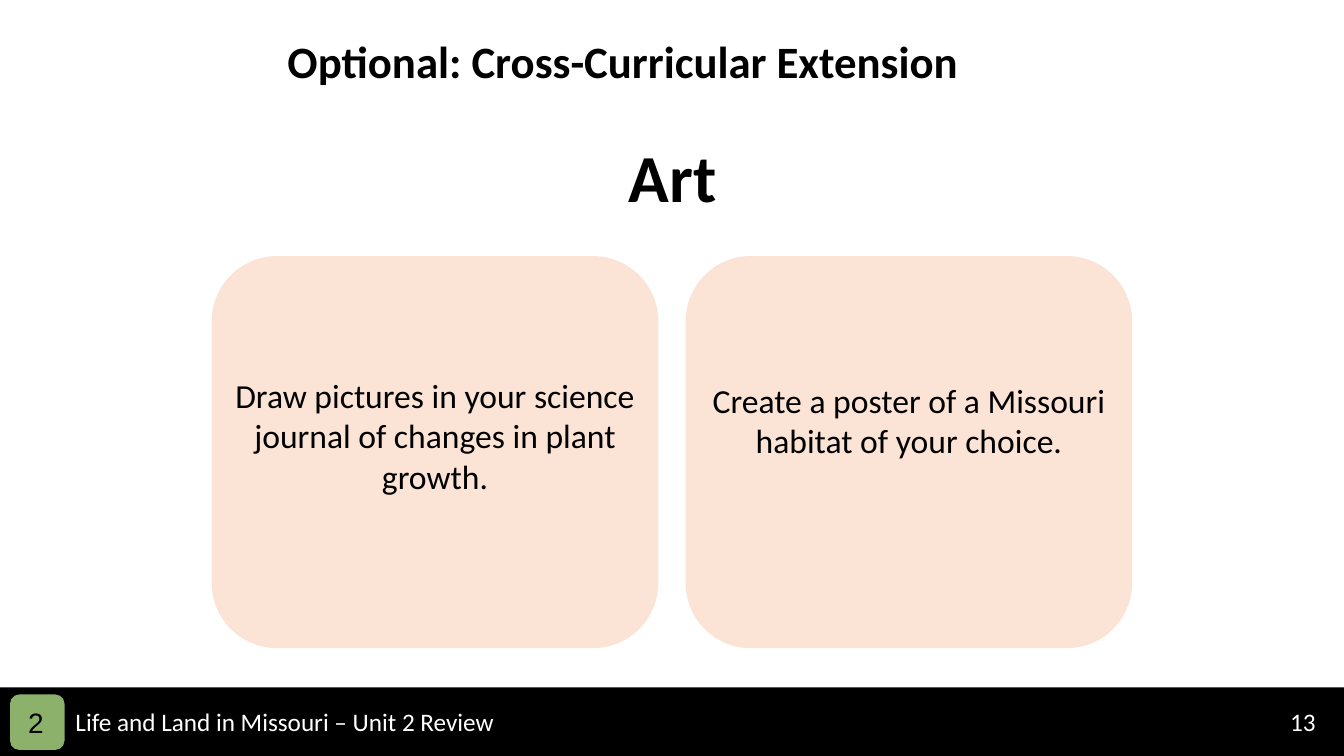
from dataclasses import dataclass

from pptx import Presentation
from pptx.dml.color import RGBColor
from pptx.enum.shapes import MSO_SHAPE
from pptx.enum.text import MSO_ANCHOR, MSO_AUTO_SIZE, PP_ALIGN
from pptx.util import Inches, Pt

RECT, ROUNDED = MSO_SHAPE.RECTANGLE, MSO_SHAPE.ROUNDED_RECTANGLE
LEFT, CENTER = PP_ALIGN.LEFT, PP_ALIGN.CENTER
TOP, NO_AUTOFIT = MSO_ANCHOR.TOP, MSO_AUTO_SIZE.NONE
TITLE_ONLY = 5


@dataclass(frozen=True)
class Theme:
    ink: str = "000000"
    paper: str = "FFFFFF"
    card: str = "FBE3D6"
    badge: str = "8CB16B"
    font: str = "Calibri"
    badge_font: str = "Arial"
    subject_size: int = 48
    title_size: int = 32
    prompt_size: int = 24
    badge_size: int = 20
    footer_size: int = 18


class SlideBuilder:
    """Places elements by percent of the slide: left, top, width, height."""

    def __init__(self, deck, theme):
        self.deck, self.theme = deck, theme
        self.slide = deck.slides.add_slide(deck.slide_layouts[TITLE_ONLY])

    def box(self, left, top, width, height):
        across, down = self.deck.slide_width / 100, self.deck.slide_height / 100
        return (round(left * across), round(top * down),
                round(width * across), round(height * down))

    def panel(self, kind, area, color):
        panel = self.slide.shapes.add_shape(kind, *self.box(*area))
        panel.shadow.inherit = False
        panel.fill.solid()
        panel.fill.fore_color.rgb = RGBColor.from_string(color)
        panel.line.fill.background()

    def set_wording(self, holder, wording, size, align, color, font, bold):
        frame = holder.text_frame
        frame_format = {"word_wrap": True, "auto_size": NO_AUTOFIT,
                        "vertical_anchor": TOP}
        for name, value in frame_format.items():
            setattr(frame, name, value)
        paragraph = frame.paragraphs[0]
        paragraph.alignment = align
        run = paragraph.add_run()
        run.text = wording
        run_format = {"size": Pt(size), "name": font or self.theme.font, "bold": bold}
        for name, value in run_format.items():
            setattr(run.font, name, value)
        run.font.color.rgb = RGBColor.from_string(color or self.theme.ink)

    def title(self, wording, area):
        heading = self.slide.shapes.title
        heading.left, heading.top, heading.width, heading.height = self.box(*area)
        self.set_wording(heading, wording, self.theme.title_size, CENTER,
                         None, None, True)

    def text(self, wording, area, size, align=LEFT, color=None, font=None, bold=False):
        label = self.slide.shapes.add_textbox(*self.box(*area))
        self.set_wording(label, wording, size, align, color, font, bold)


def main():
    deck = Presentation()
    deck.slide_width, deck.slide_height = Inches(13.33), Inches(7.5)
    theme = Theme()
    page = SlideBuilder(deck, theme)

    # Footer band with page number, unit name and unit badge
    page.panel(RECT, (0, 90.93, 100, 9.07), theme.ink)
    footer_top, footer_height = 92.8, 5.33
    footer_labels = [
        ("13", 95.25, 4.05),
        ("Life and Land in Missouri – Unit 2 Review", 4.88, 58.74),
    ]
    for wording, left, width in footer_labels:
        page.text(wording, (left, footer_top, width, footer_height),
                  theme.footer_size, color=theme.paper)
    page.panel(ROUNDED, (0.75, 91.87, 4.05, 7.33), theme.badge)
    page.text("2", (1.35, 92.67, 26.78, 5.87), theme.badge_size,
              font=theme.badge_font)

    # Title and subject
    page.title("Optional: Cross-Curricular Extension", (15.98, 3.73, 60.77, 8.53))
    page.text("Art", (21.53, 17.2, 57.01, 12.13), theme.subject_size, CENTER, bold=True)

    # Activity cards
    cards_left, card_width, card_step = 15.75, 33.23, 35.26
    activities = [
        ("Draw pictures in your science journal of changes in plant growth.", 48.93),
        ("Create a poster of a Missouri habitat of your choice.", 49.6),
    ]
    for column, (prompt, prompt_top) in enumerate(activities):
        left = cards_left + column * card_step
        page.panel(ROUNDED, (left, 33.87, card_width, 51.87), theme.card)
        page.text(prompt, (left, prompt_top, card_width, 17.47),
                  theme.prompt_size, CENTER)

    deck.save("out.pptx")


if __name__ == "__main__":
    main()
